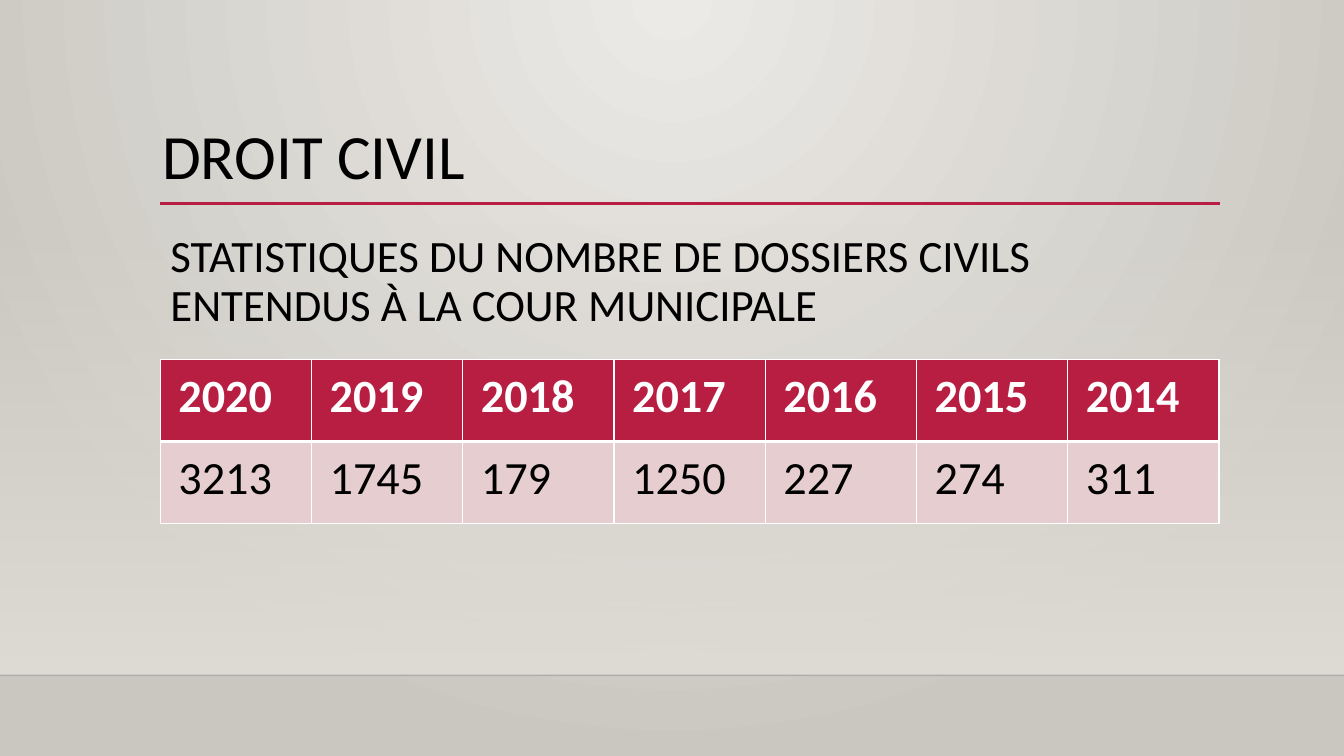
from lxml.etree import SubElement
from pptx import Presentation
from pptx.dml.color import RGBColor
from pptx.enum.shapes import MSO_CONNECTOR, MSO_SHAPE
from pptx.enum.text import MSO_ANCHOR, PP_ALIGN
from pptx.oxml.ns import qn
from pptx.util import Inches, Pt

HEADING = "DROIT CIVIL"
SUBTITLE = "STATISTIQUES DU NOMBRE DE DOSSIERS CIVILS ENTENDUS À LA COUR MUNICIPALE"
CASES = [
    ("2020", "3213"),
    ("2019", "1745"),
    ("2018", "179"),
    ("2017", "1250"),
    ("2016", "227"),
    ("2015", "274"),
    ("2014", "311"),
]
COLORS = {
    "glow": "ECEAE7", "edge": "CAC7C1", "wall": "DFDBD5", "floor": "000001",
    "accent": "B71E42", "pale": "E6CDCF", "white": "FFFFFF", "text": "000000",
}
FONT = "Calibri"
WIDTH, HEIGHT = 13.33, 7.5
LEFT, CONTENT_WIDTH = 1.59, 10.5
WALL_TOP, FLOOR_TOP = 2.21, 6.7
TABLE_TOP, ROW_HEIGHT = 3.57, 0.81


def color(key):
    return RGBColor.from_string(COLORS[key])


def set_alpha(color_element, percent):
    SubElement(color_element, qn("a:alpha"), val=str(percent * 1000))


def set_gradient(fill, start, end):
    fill.gradient()
    for stop, key in zip(fill.gradient_stops, (start, end)):
        stop.color.rgb = color(key)


def add_rule(shapes, x1, x2, y, key, width):
    rule = shapes.add_connector(
        MSO_CONNECTOR.STRAIGHT, Inches(x1), Inches(y), Inches(x2), Inches(y))
    rule.line.color.rgb = color(key)
    rule.line.width = Pt(width)
    SubElement(rule._element.spPr, qn("a:effectLst"))
    return rule


def style_text(paragraph, size, key, bold=False):
    paragraph.alignment = PP_ALIGN.LEFT
    for run in paragraph.runs:
        run.font.name = FONT
        run.font.size = Pt(size)
        run.font.bold = bold
        run.font.color.rgb = color(key)


def fill_caption(shape, wording, size, anchor):
    frame = shape.text_frame
    frame.text = wording
    frame.word_wrap = True
    frame.vertical_anchor = anchor
    frame.paragraphs[0].line_spacing = 0.9
    style_text(frame.paragraphs[0], size, "text")


def add_border(cell, side, width):
    line = SubElement(cell._tc.get_or_add_tcPr(), qn(f"a:ln{side}"), w=str(Pt(width)))
    solid = SubElement(line, qn("a:solidFill"))
    SubElement(solid, qn("a:srgbClr"), val=COLORS["white"])


def add_background(slide):
    set_gradient(slide.background.fill, "glow", "edge")
    gradient = slide._element.find(".//" + qn("a:gradFill"))
    gradient.remove(gradient.find(qn("a:lin")))
    circle = SubElement(gradient, qn("a:path"), path="circle")
    SubElement(circle, qn("a:fillToRect"), l="43000", t="0", r="43000", b="100000")

    wall = slide.shapes.add_shape(
        MSO_SHAPE.RECTANGLE, 0, Inches(WALL_TOP),
        Inches(WIDTH), Inches(FLOOR_TOP - WALL_TOP))
    wall.shadow.inherit = False
    wall.line.fill.background()
    set_gradient(wall.fill, "wall", "wall")
    wall.fill.gradient_angle = 270
    set_alpha(wall._element.find(".//" + qn("a:srgbClr")), 0)

    floor = add_rule(slide.shapes, 0, WIDTH, FLOOR_TOP, "floor", 1)
    set_alpha(floor._element.find(".//" + qn("a:srgbClr")), 20)


def add_cases_table(shapes):
    table = shapes.add_table(
        2, len(CASES), Inches(LEFT), Inches(TABLE_TOP),
        Inches(CONTENT_WIDTH), Inches(2 * ROW_HEIGHT)).table
    for row in table.rows:
        row.height = Inches(ROW_HEIGHT)
    for column, case in enumerate(CASES):
        table.columns[column].width = Inches(CONTENT_WIDTH / len(CASES))
        for row, value in enumerate(case):
            header = row == 0
            cell = table.cell(row, column)
            cell.text = value
            cell.margin_left = cell.margin_right = Inches(0.18)
            cell.margin_top = cell.margin_bottom = Inches(0.09)
            style_text(cell.text_frame.paragraphs[0], 33,
                       "white" if header else "text", header)
            widths = {"L": 1, "R": 1, "T": 1 if header else 3, "B": 3 if header else 1}
            for side, width in widths.items():
                add_border(cell, side, width)
            cell.fill.solid()
            cell.fill.fore_color.rgb = color("accent" if header else "pale")


def main():
    prs = Presentation()
    prs.slide_width, prs.slide_height = Inches(WIDTH), Inches(HEIGHT)
    slide = prs.slides.add_slide(prs.slide_layouts[5])
    add_background(slide)
    add_rule(slide.shapes, LEFT, 12.1, 2.02, "accent", 2.5)

    title = slide.shapes.title
    title.left, title.top = Inches(LEFT), Inches(2.27)
    title.width, title.height = Inches(CONTENT_WIDTH), Inches(1.15)
    fill_caption(title, SUBTITLE, 32, MSO_ANCHOR.TOP)

    add_cases_table(slide.shapes)
    heading = slide.shapes.add_textbox(
        Inches(1.51), Inches(1.18), Inches(CONTENT_WIDTH), Inches(0.8))
    fill_caption(heading, HEADING, 45, MSO_ANCHOR.MIDDLE)

    # The title placeholder comes first by default; the wall belongs behind it.
    slide.shapes[-1]._element.addprevious(title._element)
    prs.save("out.pptx")


if __name__ == "__main__":
    main()
